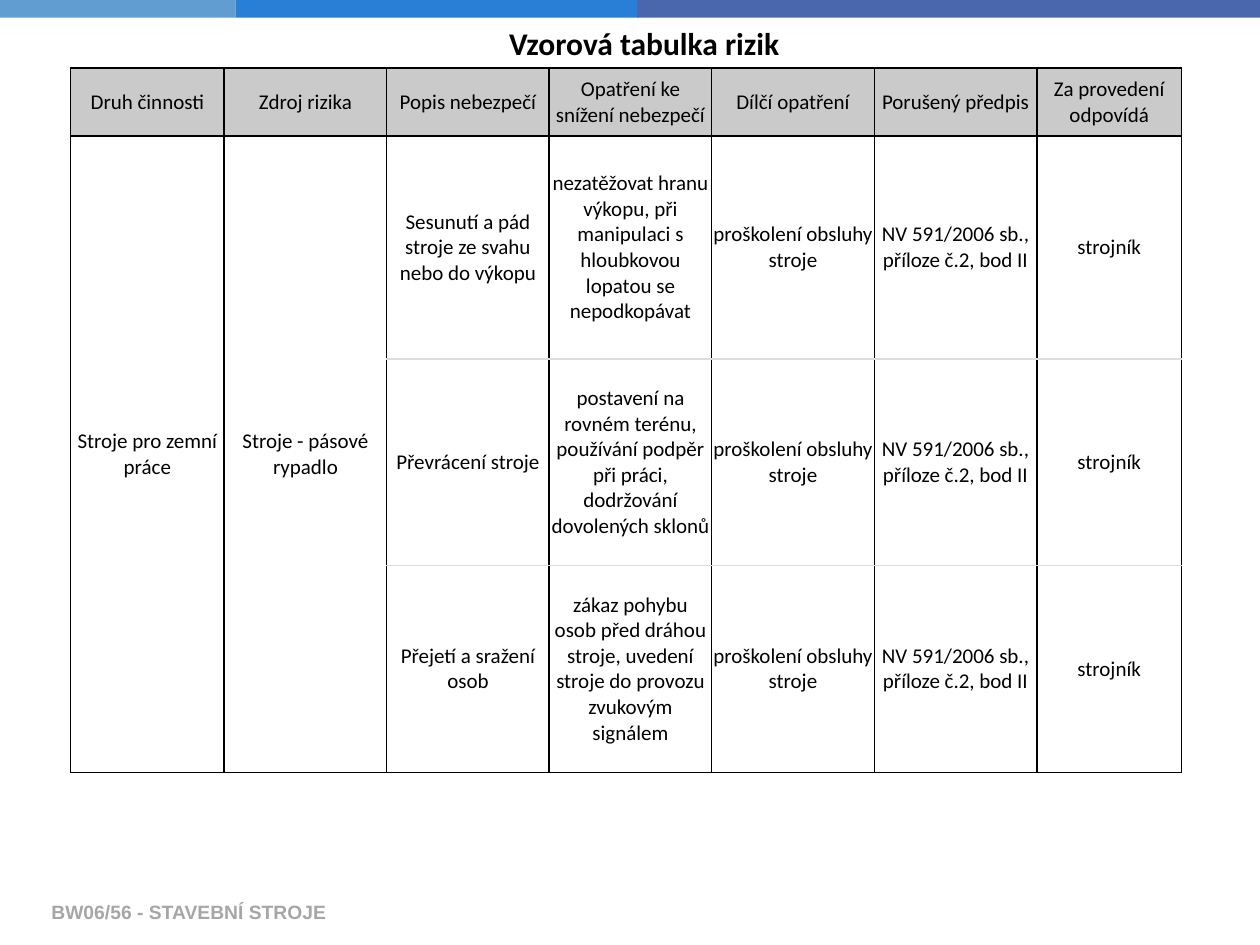
from dataclasses import dataclass

from lxml.etree import SubElement
from pptx import Presentation
from pptx.dml.color import RGBColor
from pptx.enum.shapes import MSO_SHAPE
from pptx.enum.text import MSO_ANCHOR, MSO_AUTO_SIZE, PP_ALIGN
from pptx.oxml.ns import qn
from pptx.util import Inches, Pt

COLORS = {
    "light_blue": "629DD1",
    "blue": "297FD5",
    "indigo": "4A66AC",
    "header": "CACACA",
    "black": "000000",
    "row_line": "DDDDDD",
    "footer": "A6A6A6",
}


@dataclass(frozen=True)
class Band:
    left: float
    width: float
    color: str


@dataclass(frozen=True)
class Risk:
    danger: str
    measure: str
    height: float
    partial_measure: str = "proškolení obsluhy stroje"
    regulation: str = "NV 591/2006 sb., příloze č.2, bod II"
    responsible: str = "strojník"

    def texts(self) -> list[str]:
        return [self.danger, self.measure, self.partial_measure,
                self.regulation, self.responsible]


BANDS = [
    Band(0, 1.87, "light_blue"),
    Band(1.87, 3.2, "blue"),
    Band(5.06, 4.94, "indigo"),
]
HEADERS = [
    "Druh činnosti", "Zdroj rizika", "Popis nebezpečí",
    "Opatření ke snížení nebezpečí", "Dílčí opatření",
    "Porušený předpis", "Za provedení odpovídá",
]
COLUMN_WIDTHS = [1.22] + [1.29] * 5 + [1.15]
HEADER_HEIGHT = 0.54
SHARED_CELLS = ["Stroje pro zemní práce", "Stroje - pásové rypadlo"]
RISKS = [
    Risk("Sesunutí a pád stroje ze svahu nebo do výkopu",
         "nezatěžovat hranu výkopu, při manipulaci s hloubkovou lopatou se nepodkopávat",
         1.77),
    Risk("Převrácení stroje",
         "postavení na rovném terénu, používání podpěr při práci, dodržování dovolených sklonů",
         1.64),
    Risk("Přejetí a sražení osob",
         "zákaz pohybu osob před dráhou stroje, uvedení stroje do provozu zvukovým signálem",
         1.64),
]


def write_text(frame, text: str, *, size: float, font: str = "Calibri",
               color: str = "black", bold: bool = False,
               align: PP_ALIGN = PP_ALIGN.LEFT) -> None:
    paragraph = frame.paragraphs[0]
    paragraph.alignment = align
    run = paragraph.add_run()
    run.text = text
    run.font.size = Pt(size)
    run.font.name = font
    run.font.bold = bold
    run.font.color.rgb = RGBColor.from_string(COLORS[color])


def draw_band(slide, band: Band) -> None:
    shape = slide.shapes.add_shape(
        MSO_SHAPE.RECTANGLE, Inches(band.left), Inches(-0.01),
        Inches(band.width), Inches(0.15))
    shape.shadow.inherit = False
    shape.fill.solid()
    shape.fill.fore_color.rgb = RGBColor.from_string(COLORS[band.color])
    shape.line.fill.background()


def set_border(cell, side: str, color: str, width: float) -> None:
    properties = cell._tc.get_or_add_tcPr()
    line = SubElement(properties, qn(f"a:ln{side}"), w=str(Pt(width)))
    fill = SubElement(line, qn("a:solidFill"))
    SubElement(fill, qn("a:srgbClr"), val=COLORS[color])


def format_cell(cell, row: int, column: int) -> None:
    cell.margin_left = cell.margin_right = Inches(0.01)
    cell.margin_top = cell.margin_bottom = Inches(0.01)
    cell.vertical_anchor = MSO_ANCHOR.MIDDLE
    is_risk = row > 0 and column >= len(SHARED_CELLS)
    light_sides = {"T": is_risk and row > 1,
                   "B": is_risk and row < len(RISKS)}
    for side in "LRTB":
        if light_sides.get(side, False):
            set_border(cell, side, "row_line", 0.75)
        else:
            set_border(cell, side, "black", 1)
    if row == 0:
        cell.fill.solid()
        cell.fill.fore_color.rgb = RGBColor.from_string(COLORS["header"])
    else:
        cell.fill.background()


def draw_risk_table(slide) -> None:
    heights = [HEADER_HEIGHT] + [risk.height for risk in RISKS]
    table = slide.shapes.add_table(
        len(heights), len(HEADERS), Inches(0.56), Inches(0.54),
        Inches(sum(COLUMN_WIDTHS)), Inches(sum(heights))).table
    table.first_row = False
    table.horz_banding = False
    for column, width in zip(table.columns, COLUMN_WIDTHS):
        column.width = Inches(width)
    for row, height in zip(table.rows, heights):
        row.height = Inches(height)
    for column in range(len(SHARED_CELLS)):
        table.cell(1, column).merge(table.cell(len(RISKS), column))

    blanks = [""] * len(SHARED_CELLS)
    rows = [HEADERS] + [
        (blanks if index else SHARED_CELLS) + risk.texts()
        for index, risk in enumerate(RISKS)]
    for row, texts in enumerate(rows):
        for column, text in enumerate(texts):
            cell = table.cell(row, column)
            format_cell(cell, row, column)
            if text:
                write_text(cell.text_frame, text, size=12, align=PP_ALIGN.CENTER)


def draw_title(slide) -> None:
    title = slide.shapes.title
    title.left, title.top = Inches(3.94), Inches(0.14)
    title.width, title.height = Inches(2.39), Inches(0.4)
    frame = title.text_frame
    frame.word_wrap = False
    frame.auto_size = MSO_AUTO_SIZE.SHAPE_TO_FIT_TEXT
    frame.vertical_anchor = MSO_ANCHOR.TOP
    write_text(frame, "Vzorová tabulka rizik", size=18, bold=True)


def draw_footer(slide) -> None:
    footer = slide.shapes.add_textbox(
        Inches(0.31), Inches(7.04), Inches(6.7), Inches(0.4))
    frame = footer.text_frame
    frame.word_wrap = True
    frame.vertical_anchor = MSO_ANCHOR.MIDDLE
    write_text(frame, "BW06/56 - STAVEBNÍ STROJE", size=11, font="Arial",
               color="footer", bold=True)


def main() -> None:
    presentation = Presentation()
    presentation.slide_width = Inches(10)
    presentation.slide_height = Inches(7.5)
    slide = presentation.slides.add_slide(presentation.slide_layouts[5])
    for band in BANDS:
        draw_band(slide, band)
    draw_footer(slide)
    draw_title(slide)
    draw_risk_table(slide)
    presentation.save("out.pptx")


if __name__ == "__main__":
    main()
